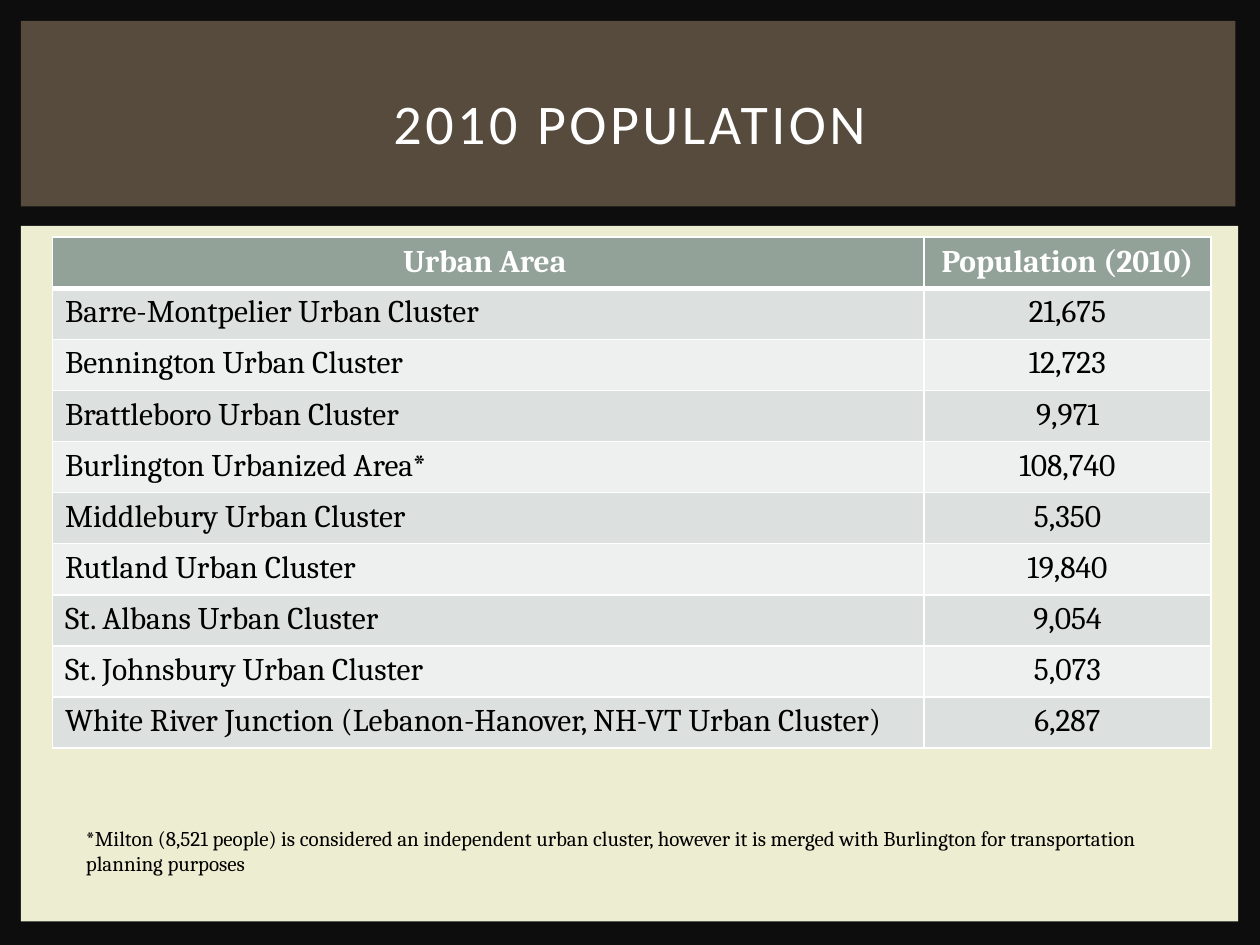
from dataclasses import dataclass
from typing import NamedTuple

from lxml import etree
from pptx import Presentation
from pptx.dml.color import RGBColor
from pptx.enum.shapes import MSO_SHAPE
from pptx.enum.text import MSO_ANCHOR, MSO_AUTO_SIZE, PP_ALIGN
from pptx.oxml.ns import qn
from pptx.util import Pt

RECTANGLE = MSO_SHAPE.RECTANGLE
TOP, MIDDLE = MSO_ANCHOR.TOP, MSO_ANCHOR.MIDDLE
LEFT, CENTER = PP_ALIGN.LEFT, PP_ALIGN.CENTER
FIT_SHAPE, NO_FIT = MSO_AUTO_SIZE.SHAPE_TO_FIT_TEXT, MSO_AUTO_SIZE.NONE


@dataclass(frozen=True)
class Theme:
    background: str = "0D0D0D"
    panel: str = "ECEDD1"
    banner: str = "564B3C"
    header: str = "93A299"
    bands: tuple[str, str] = ("DCE0DE", "EEF0EF")
    light: str = "FFFFFF"
    dark: str = "000000"
    heading_font: str = "Calibri"
    body_font: str = "Cambria"
    title_size: float = 32
    table_size: float = 18
    note_size: float = 12


class Box(NamedTuple):
    left: float
    top: float
    width: float
    height: float

    def lengths(self) -> list[Pt]:
        return [Pt(v) for v in self]


class Population(NamedTuple):
    area: str
    people: str


THEME = Theme()
PANELS = [
    (Box(12, 129, 695.5, 397.5), THEME.panel),
    (Box(12, 12, 694, 106), THEME.banner),
]
TITLE_BOX = Box(30, 28, 660, 83)
NOTE_BOX = Box(42, 468, 636, 36)
TABLE_LEFT, TABLE_TOP, ROW_HEIGHT = 30, 135.5, 29.2
COLUMN_WIDTHS = (498, 164)
HEADER = Population("Urban Area ", "Population (2010)")
POPULATIONS = [
    Population("Barre-Montpelier Urban Cluster", "21,675"),
    Population("Bennington Urban Cluster", "12,723"),
    Population("Brattleboro Urban Cluster", "9,971"),
    Population("Burlington Urbanized Area*", "108,740"),
    Population("Middlebury Urban Cluster", "5,350"),
    Population("Rutland Urban Cluster", "19,840"),
    Population("St. Albans Urban Cluster", "9,054"),
    Population("St. Johnsbury Urban Cluster", "5,073"),
    Population("White River Junction (Lebanon-Hanover, NH-VT Urban Cluster)", "6,287"),
]
NOTE = (
    "*Milton (8,521 people) is considered an independent urban cluster, "
    "however it is merged with Burlington for transportation planning purposes"
)


def write(tf, text: str, font: str, size: float, color: str, align=LEFT, bold=False):
    p = tf.paragraphs[0]
    p.alignment = align
    r = p.add_run()
    r.text = text
    for name, value in {"name": font, "size": Pt(size), "bold": bold}.items():
        setattr(r.font, name, value)
    r.font.color.rgb = RGBColor.from_string(color)
    return r


def add_panel(s, box: Box, color: str) -> None:
    sp = s.shapes.add_shape(RECTANGLE, *box.lengths())
    sp.shadow.inherit = False
    sp.fill.solid()
    sp.fill.fore_color.rgb = RGBColor.from_string(color)
    sp.line.fill.background()


def add_title(s, text: str) -> None:
    sp = s.shapes.title
    for name, value in zip(Box._fields, TITLE_BOX.lengths()):
        setattr(sp, name, value)
    tf = sp.text_frame
    for name, value in {"vertical_anchor": MIDDLE, "word_wrap": True, "auto_size": NO_FIT}.items():
        setattr(tf, name, value)
    r = write(tf, text, THEME.heading_font, THEME.title_size, THEME.light, CENTER)
    r.font._element.set("spc", "200")
    sp._element.getparent().append(sp._element)


def set_borders(cell, bottom: float) -> None:
    tc_pr = cell._tc.get_or_add_tcPr()
    for i, (side, width) in enumerate({"L": 1, "R": 1, "T": 1, "B": bottom}.items()):
        ln = etree.Element(qn(f"a:ln{side}"), w=str(Pt(width)))
        fill = etree.SubElement(ln, qn("a:solidFill"))
        etree.SubElement(fill, qn("a:srgbClr"), val=THEME.light)
        tc_pr.insert(i, ln)


def add_population_table(s) -> None:
    rows = [HEADER, *POPULATIONS]
    box = Box(TABLE_LEFT, TABLE_TOP, sum(COLUMN_WIDTHS), ROW_HEIGHT * len(rows))
    table = s.shapes.add_table(len(rows), len(COLUMN_WIDTHS), *box.lengths()).table
    for column, width in zip(table.columns, COLUMN_WIDTHS):
        column.width = Pt(width)
    for i, row in enumerate(rows):
        is_header = i == 0
        table.rows[i].height = Pt(ROW_HEIGHT)
        fill = THEME.header if is_header else THEME.bands[(i - 1) % 2]
        color = THEME.light if is_header else THEME.dark
        for j, text in enumerate(row):
            cell = table.cell(i, j)
            cell.vertical_anchor = MIDDLE if is_header else TOP
            cell.fill.solid()
            cell.fill.fore_color.rgb = RGBColor.from_string(fill)
            align = CENTER if is_header or j else LEFT
            write(cell.text_frame, text, THEME.body_font, THEME.table_size, color, align, is_header)
            set_borders(cell, 3 if is_header else 1)


def add_note(s, text: str) -> None:
    tf = s.shapes.add_textbox(*NOTE_BOX.lengths()).text_frame
    tf.word_wrap = True
    tf.auto_size = FIT_SHAPE
    write(tf, text, THEME.body_font, THEME.note_size, THEME.dark)


def main() -> None:
    prs = Presentation()
    prs.slide_width, prs.slide_height = Pt(720), Pt(540)
    s = prs.slides.add_slide(prs.slide_layouts[5])
    s.background.fill.solid()
    s.background.fill.fore_color.rgb = RGBColor.from_string(THEME.background)
    for box, color in PANELS:
        add_panel(s, box, color)
    add_population_table(s)
    add_title(s, "2010 POPULATION")
    add_note(s, NOTE)
    prs.save("out.pptx")


if __name__ == "__main__":
    main()
